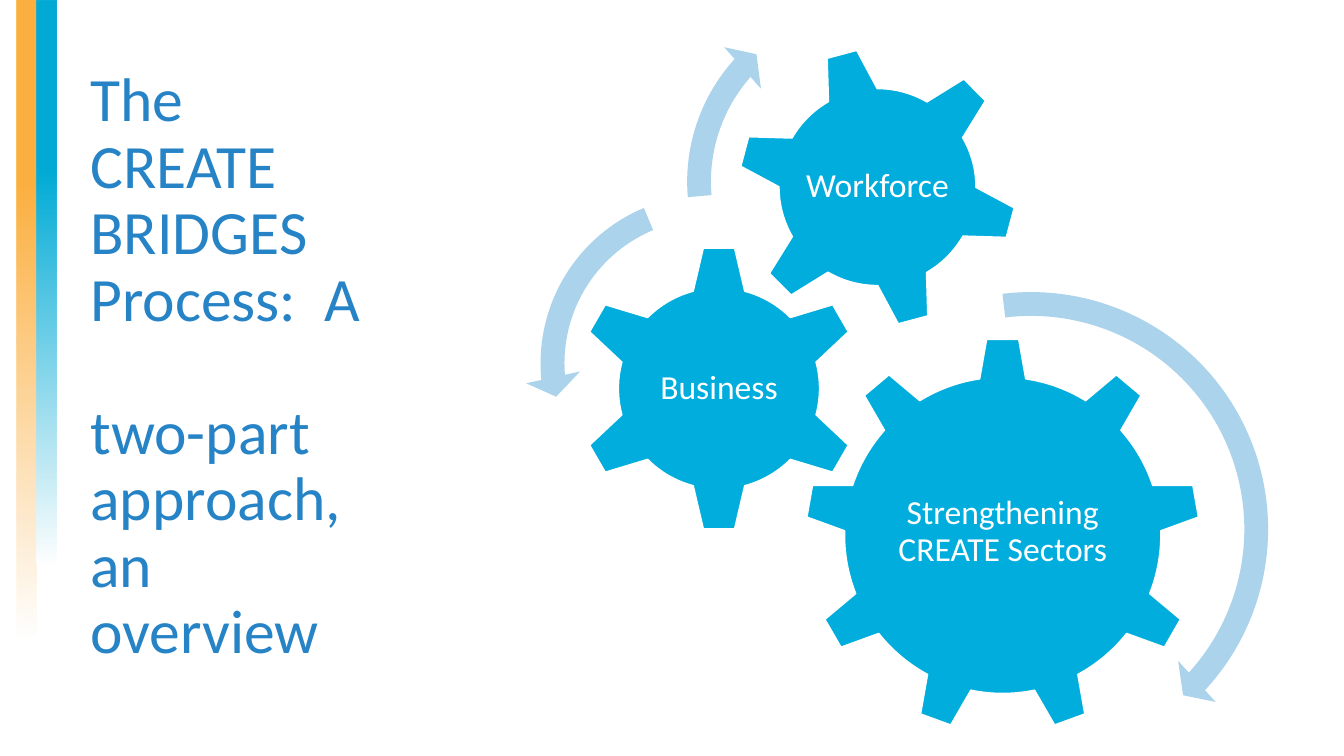
from lxml.etree import SubElement
from pptx import Presentation
from pptx.dml.color import RGBColor
from pptx.enum.shapes import MSO_SHAPE as SHAPE
from pptx.enum.text import MSO_ANCHOR as ANCHOR, PP_ALIGN as ALIGN
from pptx.oxml.ns import qn
from pptx.util import Cm, Pt

COLORS = {
    "orange": "FCB040",
    "teal": "00ABD6",
    "title": "2683C6",
    "gear": "00ADDC",
    "arrow": "ABD3EB",
    "white": "FFFFFF",
}
FONT = "Calibri"


def color(name):
    return RGBColor.from_string(COLORS[name])


def add_preset(shapes, preset, left, top, width, height, rotation=0):
    shape = shapes.add_shape(preset, Cm(left), Cm(top), Cm(width), Cm(height))
    shape.shadow.inherit = False
    shape.rotation = rotation
    shape.line.fill.background()
    return shape


def add_fading_bar(shapes, left, top, length, tint, fade_start):
    """Add a vertical bar that fades to white from fade_start downwards."""
    bar = add_preset(shapes, SHAPE.RECTANGLE, left, top, length, 0.51, 90)
    bar.fill.gradient()
    bar.fill.gradient_angle = 0
    stops = bar.fill.gradient_stops
    for stop, name, position in zip(stops, (tint, "white"), (fade_start, 1)):
        stop.color.rgb = color(name)
        stop.position = position
    white = bar.fill._fill._gradFill.findall(".//" + qn("a:srgbClr"))[-1]
    SubElement(white, qn("a:alpha"), val="96000")


def add_text(shapes, text, left, top, width, height, size, tint, align, inset):
    box = shapes.add_textbox(Cm(left), Cm(top), Cm(width), Cm(height))
    frame = box.text_frame
    frame.word_wrap = True
    frame.vertical_anchor = ANCHOR.MIDDLE
    frame.margin_left = frame.margin_right = Cm(inset[0])
    frame.margin_top = frame.margin_bottom = Cm(inset[1])
    paragraph = frame.paragraphs[0]
    paragraph.text = text
    paragraph.alignment = align
    paragraph.line_spacing = 0.9
    paragraph.font.name = FONT
    paragraph.font.size = Pt(size)
    paragraph.font.color.rgb = color(tint)


def add_gear(shapes, preset, left, top, size, label, label_size, rotation=0, lift=0):
    """Add a gear with an upright label at its centre, raised by lift."""
    gear = add_preset(shapes, preset, left, top, size, size, rotation)
    gear.fill.solid()
    gear.fill.fore_color.rgb = color("gear")
    gear.line.color.rgb = color("white")
    gear.line.width = Pt(1)
    width, height = label_size
    add_text(shapes, label, left + (size - width) / 2,
             top + (size - height) / 2 - lift, width, height,
             24, "white", ALIGN.CENTER, (0.08, 0.08))


def add_turn_arrow(shapes, preset, left, top, size, adjustments):
    arrow = add_preset(shapes, preset, left, top, size, size)
    arrow.fill.solid()
    arrow.fill.fore_color.rgb = color("arrow")
    for index, value in enumerate(adjustments):
        arrow.adjustments[index] = value


def main():
    deck = Presentation()
    deck.slide_width, deck.slide_height = Cm(33.87), Cm(19.05)
    slide = deck.slides.add_slide(deck.slide_layouts[6])

    add_fading_bar(slide.shapes, -7.37, 7.77, 16.08, "orange", 0.29)
    add_fading_bar(slide.shapes, -5.94, 6.86, 14.22, "teal", 0.3)
    add_text(slide.shapes,
             "The CREATE BRIDGES Process:  A \vtwo-part approach, an overview",
             2.03, 0.58, 7.47, 17.37, 44, "title", ALIGN.LEFT, (0.25, 0.13))

    gearwork = slide.shapes.add_group_shape().shapes
    add_gear(gearwork, SHAPE.GEAR_9, 20.29, 8.51, 9.96,
             "Strengthening CREATE Sectors", (5.94, 5.13), lift=0.08)
    add_gear(gearwork, SHAPE.GEAR_6, 14.5, 6.17, 7.24, "Business", (3.6, 3.6))
    add_gear(gearwork, SHAPE.GEAR_6, 18.57, 1.17, 7.09, "Workforce", (4, 4),
             rotation=345)

    for preset, left, top, size, adjustments in (
        (SHAPE.CIRCULAR_ARROW, 19.61, 6.96, 12.75,
         (0.047, 2.99, 25.532, 157.836, 0.055)),
        (SHAPE.LEFT_CIRCULAR_ARROW, 13.23, 4.52, 9.27,
         (0.065, 4.3, 104.891, 148.378, 0.075)),
        (SHAPE.CIRCULAR_ARROW, 16.92, -0.41, 9.98,
         (0.06, 3.941, 133.138, 105.082, 0.07)),
    ):
        add_turn_arrow(gearwork, preset, left, top, size, adjustments)

    deck.save("out.pptx")


if __name__ == "__main__":
    main()
